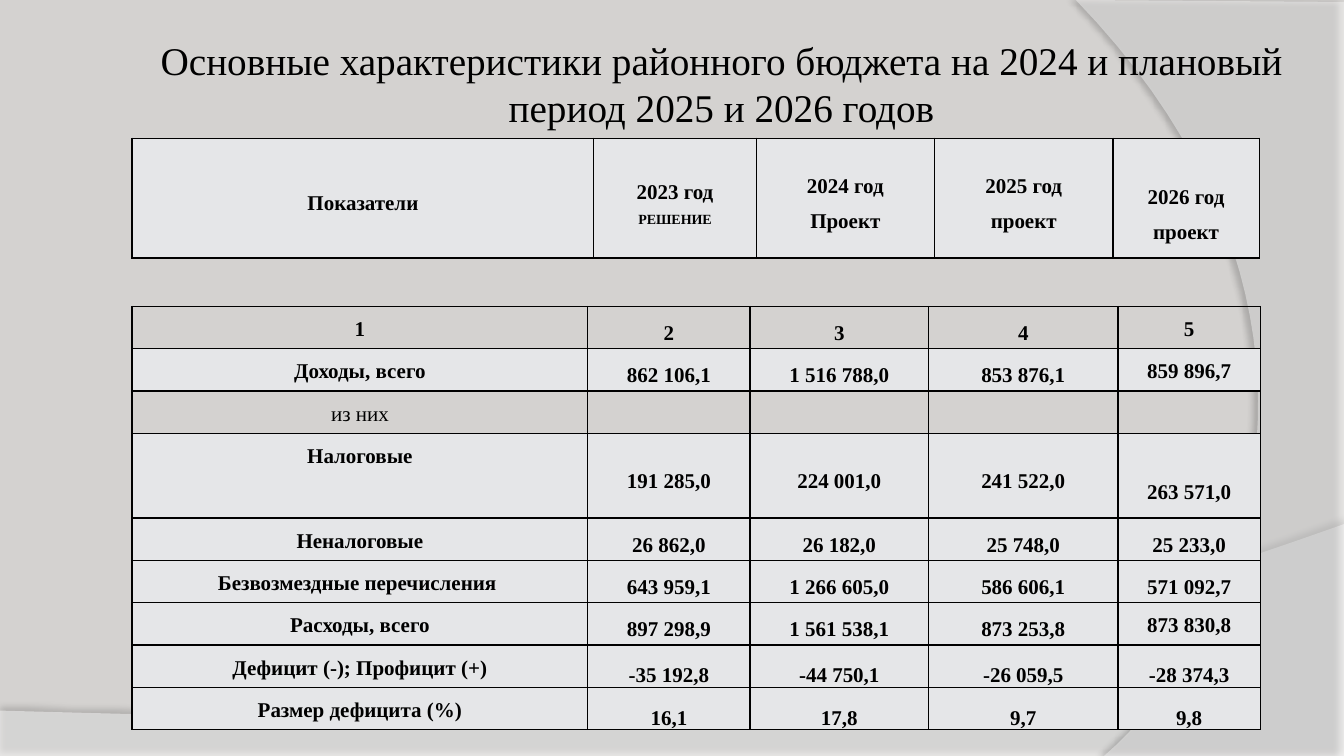
"""Build the slide with the main figures of the district budget."""
from lxml.etree import SubElement
from pptx import Presentation
from pptx.dml.color import RGBColor
from pptx.enum.text import MSO_ANCHOR as Anchor, PP_ALIGN as Align
from pptx.oxml import parse_xml
from pptx.oxml.ns import qn, nsdecls
from pptx.util import Inches, Pt

FONT, INK, PAPER, PALE = "Times New Roman", "000000", "D4D2D0", "E5E6E8"
TITLE = "Основные характеристики районного бюджета на 2024 и плановый период 2025 и 2026 годов"
PLACES = {"t": Anchor.TOP, "m": Anchor.MIDDLE, "b": Anchor.BOTTOM}
LINE = 0.36

HEAD = {
    "top": 1.37, "cols": [4.58, 1.61, 1.77, 1.77, 1.45], "rows": [1.19],
    "cells": [["Показатели", "2023 год ", "2024 год\nПроект", "2025 год\nпроект", "2026 год\nпроект"]],
    "anchors": ["mmmmt"], "clear": [], "drop": (0, 4),
}
BODY = {
    "top": 3.04, "cols": [4.52, 1.61, 1.77, 1.88, 1.41],
    "rows": [0.42] * 3 + [0.84] + [0.42] * 5,
    "cells": [
        ["1", "2", "3", "4", "5"],
        ["Доходы, всего", "862 106,1", "1 516 788,0", "853 876,1", "859 896,7"],
        ["из них", "", "", "", ""],
        ["Налоговые", "191 285,0", "224 001,0", "241 522,0", "263 571,0"],
        ["Неналоговые", "26 862,0", "26 182,0", "25 748,0", "25 233,0"],
        ["Безвозмездные перечисления ", "643 959,1", "1 266 605,0", "586 606,1", "571 092,7"],
        ["Расходы, всего", "897 298,9", "1 561 538,1", "873 253,8", "873 830,8"],
        ["Дефицит (-); Профицит (+)", "-35 192,8", "-44 750,1", "-26 059,5", "-28 374,3"],
        ["Размер дефицита (%)", "16,1", "17,8", "9,7", "9,8"],
    ],
    "anchors": ["tmmmt", "tmmmt", "ttttt", "tmmmt", "tmmmm", "tmmmm", "tmmmt", "tbbbb", "tbbbb"],
    "clear": [0, 2], "drop": (3, 4),
}
WAVES = [
    {"start": [(0, 7.5), (13.33, 7.5)], "curve": [(13.33, 5.2), (7.45, 7.29), (5.21, 7.19), (0, 7.05)],
     "alpha": 45, "shade": 35, "dist": 3.5, "angle": 270},
    {"start": [(13.33, 0.02), (13.33, 7.5)], "curve": [(10.95, 7.5), (12.46, 6.19), (13.57, 3), (10.67, 0)],
     "alpha": 40, "shade": 45, "dist": 4, "angle": 180},
]


def paint(fill, tint):
    fill.solid()
    fill.fore_color.rgb = RGBColor.from_string(tint)


def write(para, text, size, bold):
    run = para.add_run()
    run.text = text
    for name, value in {"name": FONT, "size": Pt(size), "bold": bold}.items():
        setattr(run.font, name, value)
    run.font.color.rgb = RGBColor.from_string(INK)


def bend(curve, steps=40):
    for n in range(steps + 1):
        t = n / steps
        parts = ((1 - t) ** 3, 3 * t * (1 - t) ** 2, 3 * t * t * (1 - t), t ** 3)
        yield tuple(sum(w * p[axis] for w, p in zip(parts, curve)) for axis in (0, 1))


def draw_wave(slide, wave):
    dots = [(Inches(x), Inches(y)) for x, y in wave["start"] + list(bend(wave["curve"]))]
    pen = slide.shapes.build_freeform(*dots[0])
    pen.add_line_segments(dots[1:])
    shape = pen.convert_to_shape()
    paint(shape.fill, "FFFFFF")
    shape.line.fill.background()
    props = shape.element.spPr
    tint = props.find(qn("a:solidFill"))[0]
    SubElement(tint, qn("a:alpha"), val=str(wave["alpha"] * 1000))
    props.append(parse_xml(
        f'<a:effectLst {nsdecls("a")}><a:outerShdw blurRad="{Pt(4)}" dist="{Pt(wave["dist"])}" '
        f'dir="{wave["angle"] * 60000}" algn="ctr" rotWithShape="0"><a:srgbClr val="{INK}">'
        f'<a:alpha val="{wave["shade"] * 1000}"/></a:srgbClr></a:outerShdw></a:effectLst>'))


def frame(cell):
    props = cell._tc.get_or_add_tcPr()
    for side in ("lnL", "lnR", "lnT", "lnB"):
        props.append(parse_xml(
            f'<a:{side} {nsdecls("a")} w="{Pt(1)}"><a:solidFill><a:srgbClr val="{INK}"/>'
            f'</a:solidFill></a:{side}>'))


def fill_cell(cell, text, place, tint, drop):
    frame(cell)
    if tint:
        paint(cell.fill, tint)
    else:
        cell.fill.background()
    style = {"margin_left": 0.08, "margin_right": 0.08, "margin_top": drop, "margin_bottom": 0}
    for name, value in style.items():
        setattr(cell, name, Inches(value))
    cell.vertical_anchor = PLACES[place]
    for n, line in enumerate(text.split("\n")):
        para = cell.text_frame.add_paragraph() if n else cell.text_frame.paragraphs[0]
        para.alignment, para.line_spacing = Align.CENTER, 1.5
        if line:
            write(para, line, 15, line != "из них")


def draw_table(slide, data):
    cols, rows = data["cols"], data["rows"]
    table = slide.shapes.add_table(len(rows), len(cols), Inches(1.31), Inches(data["top"]),
                                   Inches(sum(cols)), Inches(sum(rows))).table
    table.first_row = table.horz_banding = False
    for col, width in zip(table.columns, cols):
        col.width = Inches(width)
    for r, height in enumerate(rows):
        table.rows[r].height = Inches(height)
        for c, text in enumerate(data["cells"][r]):
            fill_cell(table.cell(r, c), text, data["anchors"][r][c],
                      None if r in data["clear"] else PALE,
                      LINE if (r, c) == data["drop"] else 0)
    return table


def draw_title(slide):
    frame = slide.shapes.add_textbox(Inches(1.4), Inches(0.44), Inches(11.51), Inches(0.77)).text_frame
    frame.word_wrap, frame.vertical_anchor = True, Anchor.MIDDLE
    for side in ("left", "right", "top", "bottom"):
        setattr(frame, f"margin_{side}", Inches(0.05))
    frame.paragraphs[0].alignment = Align.CENTER
    write(frame.paragraphs[0], TITLE, 28, False)


def main():
    deck = Presentation()
    deck.slide_width, deck.slide_height = Inches(13.33), Inches(7.5)
    slide = deck.slides.add_slide(deck.slide_layouts[6])
    paint(slide.background.fill, PAPER)
    for wave in WAVES:
        draw_wave(slide, wave)
    draw_title(slide)
    head = draw_table(slide, HEAD)
    write(head.cell(0, 1).text_frame.paragraphs[0], "РЕШЕНИЕ", 10, True)
    draw_table(slide, BODY)
    deck.save("out.pptx")


if __name__ == "__main__":
    main()
